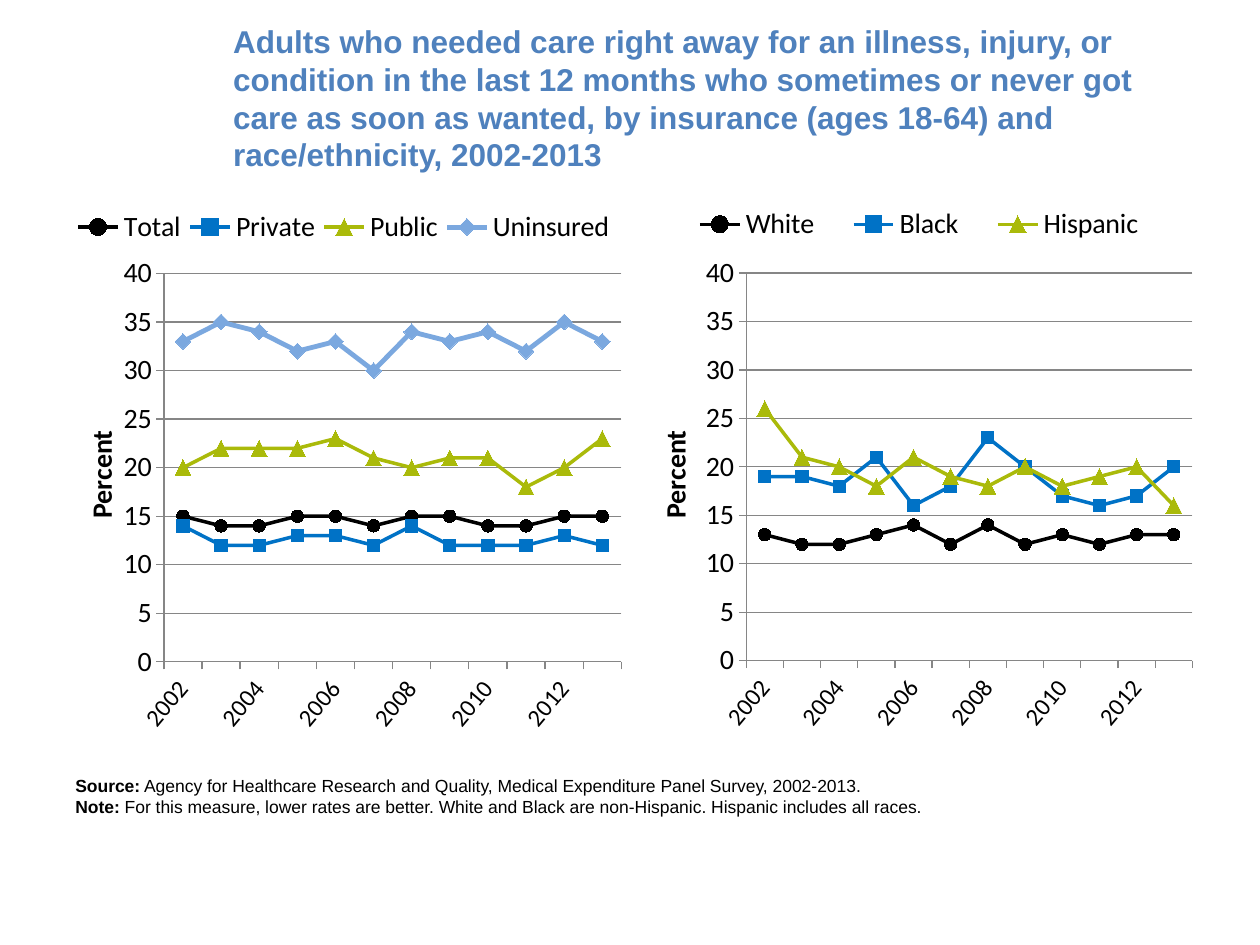
from lxml.etree import SubElement
from pptx import Presentation
from pptx.chart.data import CategoryChartData
from pptx.dml.color import RGBColor
from pptx.enum.chart import XL_CHART_TYPE as ChartType
from pptx.enum.chart import XL_LEGEND_POSITION as LegendPosition
from pptx.enum.chart import XL_MARKER_STYLE as Marker
from pptx.enum.chart import XL_TICK_MARK as TickMark
from pptx.enum.text import MSO_ANCHOR, MSO_AUTO_SIZE, PP_ALIGN
from pptx.oxml import parse_xml
from pptx.oxml.ns import nsdecls, qn
from pptx.util import Inches, Pt

BLACK = RGBColor(0, 0, 0)
BLUE = RGBColor(0x00, 0x72, 0xC6)
GREEN = RGBColor(0xAA, 0xBA, 0x0A)
LIGHT_BLUE = RGBColor(0x7B, 0xA8, 0xDF)
TITLE_BLUE = RGBColor(0x4F, 0x81, 0xBD)
GRAY = RGBColor(0x86, 0x86, 0x86)

TITLE = ("Adults who needed care right away for an illness, injury, or condition "
         "in the last 12 months who sometimes or never got care as soon as wanted, "
         "by insurance (ages 18-64) and race/ethnicity, 2002-2013")
NOTES = [
    ("Source:", " Agency for Healthcare Research and Quality, "
                "Medical Expenditure Panel Survey, 2002-2013."),
    ("Note: ", "For this measure, lower rates are better. White and Black are "
               "non-Hispanic. Hispanic includes all races."),
]
YEARS = [str(year) for year in range(2002, 2014)]
STYLES = [
    (BLACK, Marker.CIRCLE, 7, 2),
    (BLUE, Marker.SQUARE, 7, 2),
    (GREEN, Marker.TRIANGLE, 9, 2),
    (LIGHT_BLUE, Marker.DIAMOND, 9, 2.75),
]
CHARTS = [
    {
        "left": 0.5,
        "plot": (0.178, 0.127, 0.807, 0.685),
        "legend": (0.01, 0, 0.97, 0.09),
        "axis_title": (0.025, 0.395),
        "series": {
            "Total": (15, 14, 14, 15, 15, 14, 15, 15, 14, 14, 15, 15),
            "Private": (14, 12, 12, 13, 13, 12, 14, 12, 12, 12, 13, 12),
            "Public": (20, 22, 22, 22, 23, 21, 20, 21, 21, 18, 20, 23),
            "Uninsured": (33, 35, 34, 32, 33, 30, 34, 33, 34, 32, 35, 33),
        },
    },
    {
        "left": 5,
        "plot": (0.205, 0.126, 0.787, 0.684),
        "legend": (0.07, 0, 0.88, 0.08),
        "axis_title": (0.037, 0.395),
        "series": {
            "White": (13, 12, 12, 13, 14, 12, 14, 12, 13, 12, 13, 13),
            "Black": (19, 19, 18, 21, 16, 18, 23, 20, 17, 16, 17, 20),
            "Hispanic": (26, 21, 20, 18, 21, 19, 18, 20, 18, 19, 20, 16),
        },
    },
]


def set_format(target, values):
    for name, value in values.items():
        setattr(target, name, value)


def style_font(font, size, name="Calibri", color=BLACK, bold=False):
    set_format(font, {"size": Pt(size), "name": name, "bold": bold})
    font.color.rgb = color


def set_layout(element, before, place, inner=False):
    for old in element.findall(qn("c:layout")):
        element.remove(old)
    layout = parse_xml(f"<c:layout {nsdecls('c')}><c:manualLayout/></c:layout>")
    manual = layout[0]
    if inner:
        SubElement(manual, qn("c:layoutTarget")).set("val", "inner")
    for tag in ("xMode", "yMode"):
        SubElement(manual, qn(f"c:{tag}")).set("val", "edge")
    for tag, value in zip("xywh", place):
        SubElement(manual, qn(f"c:{tag}")).set("val", str(value))
    anchor = [child for child in element if child.tag == qn(before)][-1]
    anchor.addnext(layout)


def style_axes(chart, title_place):
    years, percent = chart.category_axis, chart.value_axis
    for axis, size in ((years, 14), (percent, 16)):
        style_font(axis.tick_labels.font, size)
        set_format(axis, {"major_tick_mark": TickMark.OUTSIDE,
                          "minor_tick_mark": TickMark.NONE})
        axis.format.line.color.rgb = GRAY
        axis.format.line.width = Pt(0.75)

    years_xml = years._element
    years_xml.find(qn("c:txPr")).find(qn("a:bodyPr")).set("rot", "-3000000")
    skip = parse_xml(f'<c:tickLblSkip {nsdecls("c")} val="2"/>')
    years_xml.find(qn("c:noMultiLvlLbl")).addprevious(skip)

    set_format(percent, {"minimum_scale": 0, "maximum_scale": 40,
                         "major_unit": 5, "has_major_gridlines": True})
    percent.major_gridlines.format.line.color.rgb = GRAY
    percent.major_gridlines.format.line.width = Pt(0.75)
    set_format(percent.tick_labels, {"number_format": "0",
                                     "number_format_is_linked": False})
    frame = percent.axis_title.text_frame
    frame.text = "Percent"
    style_font(frame.paragraphs[0].runs[0].font, 16, bold=True)
    body = frame._txBody.find(qn("a:bodyPr"))
    body.set("rot", "-5400000")
    body.set("vert", "horz")
    set_layout(percent.axis_title._element, "c:tx", title_place)


def add_line_chart(page, content):
    data = CategoryChartData(number_format="0")
    data.categories = YEARS
    for name, values in content["series"].items():
        data.add_series(name, values)
    chart = page.shapes.add_chart(
        ChartType.LINE_MARKERS, Inches(content["left"]), Inches(1.6),
        Inches(4.5), Inches(4.5), data).chart
    chart.has_title = False
    style_font(chart.font, 10, "Arial")
    chart.plots[0].vary_by_categories = False

    for series, (color, marker, size, width) in zip(chart.plots[0].series, STYLES):
        series.smooth = False
        series.format.line.color.rgb = color
        series.format.line.width = Pt(width)
        set_format(series.marker, {"style": marker, "size": size})
        series.marker.format.fill.solid()
        series.marker.format.fill.fore_color.rgb = color
        series.marker.format.line.color.rgb = color

    style_axes(chart, content["axis_title"])
    chart.has_legend = True
    set_format(chart.legend, {"position": LegendPosition.TOP,
                              "include_in_layout": False})
    style_font(chart.legend.font, 16)
    set_layout(chart.legend._element, "c:legendPos", content["legend"])

    plot_area = chart._chartSpace.chart.plotArea
    for old in plot_area.findall(qn("c:layout")):
        plot_area.remove(old)
    marker_position = parse_xml(f"<c:layout {nsdecls('c')}/>")
    plot_area.insert(0, marker_position)
    set_plot = plot_area[0]
    manual = SubElement(set_plot, qn("c:manualLayout"))
    settings = [("layoutTarget", "inner"), ("xMode", "edge"), ("yMode", "edge")]
    for tag, value in settings + list(zip("xywh", content["plot"])):
        SubElement(manual, qn(f"c:{tag}")).set("val", str(value))


def add_title(page):
    title = page.shapes.title
    set_format(title, {"left": Inches(1.75), "top": Inches(0.3),
                       "width": Inches(7.75), "height": Inches(0.95)})
    frame = title.text_frame
    frame.text = TITLE
    set_format(frame, {"word_wrap": True, "auto_size": MSO_AUTO_SIZE.NONE,
                       "vertical_anchor": MSO_ANCHOR.MIDDLE})
    frame.paragraphs[0].alignment = PP_ALIGN.LEFT
    style_font(frame.paragraphs[0].runs[0].font, 18, "Arial", TITLE_BLUE, True)


def add_notes(page):
    box = page.shapes.add_textbox(Inches(0.5), Inches(6.1), Inches(9), Inches(0.44))
    frame = box.text_frame
    frame.word_wrap = True
    for index, texts in enumerate(NOTES):
        para = frame.add_paragraph() if index else frame.paragraphs[0]
        for text, bold in zip(texts, (True, False)):
            span = para.add_run()
            span.text = text
            style_font(span.font, 10, "Arial", bold=bold)


def main():
    deck = Presentation()
    set_format(deck, {"slide_width": Inches(10), "slide_height": Inches(7.5)})
    page = deck.slides.add_slide(deck.slide_layouts[5])
    add_title(page)
    add_notes(page)
    for content in CHARTS:
        add_line_chart(page, content)
    deck.save("out.pptx")


if __name__ == "__main__":
    main()
